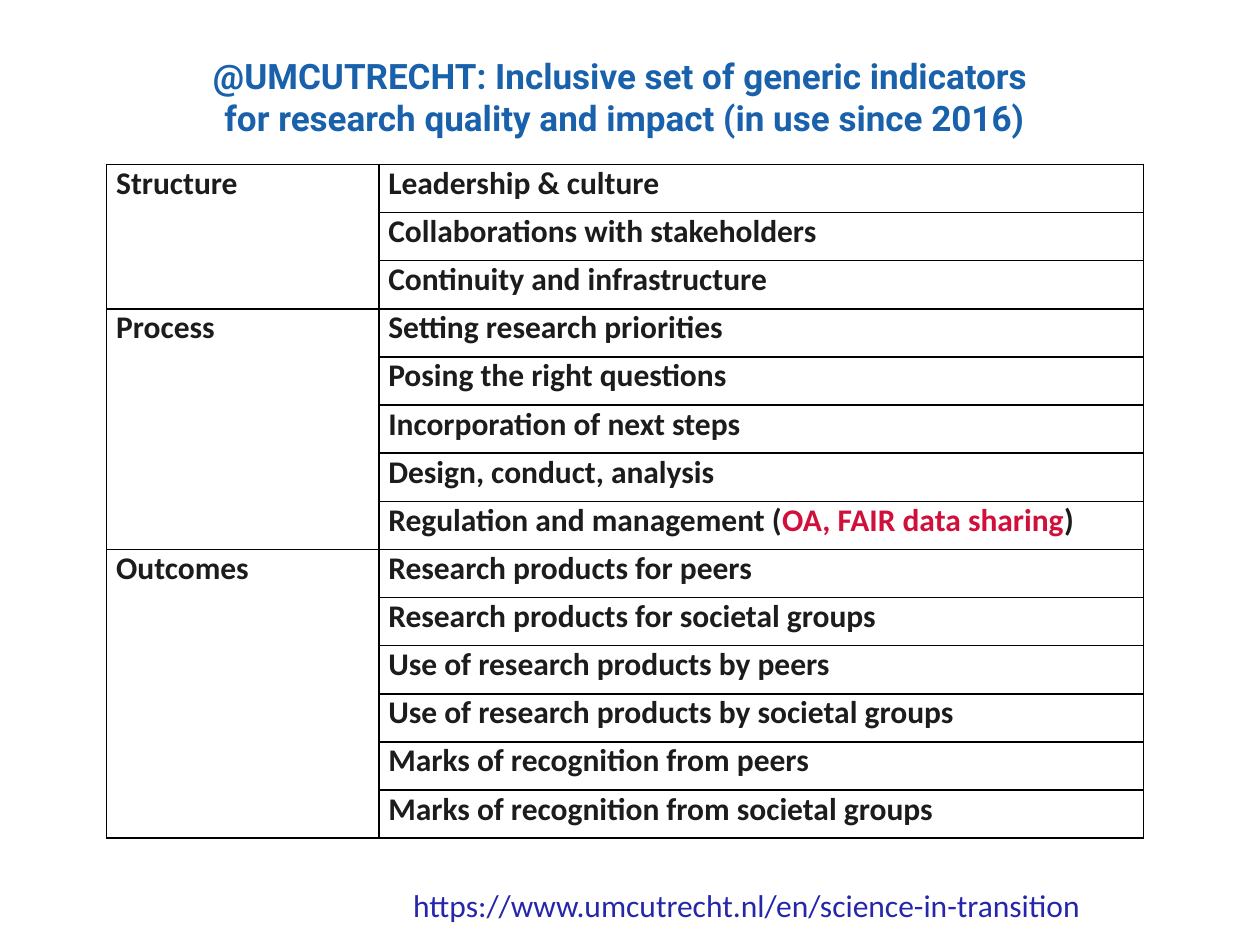
import dataclasses

import pptx
import pptx.dml.color
import pptx.enum.text
import pptx.oxml
import pptx.oxml.ns
import pptx.util

Pt = pptx.util.Pt
RGB = pptx.dml.color.RGBColor.from_string
Align = pptx.enum.text.PP_ALIGN
Anchor = pptx.enum.text.MSO_ANCHOR


@dataclasses.dataclass(frozen=True)
class Theme:
    head: str = "Roboto"
    body: str = "Calibri"
    big: int = 20
    size: int = 18
    blue: str = "1961AB"
    ink: str = "1C1C1C"
    red: str = "D0103A"
    link: str = "2526A9"
    rule: str = "000000"


THEME = Theme()

# Each group: name and indicators; an indicator is a list of (text, colour)
GROUPS = [
    ("Structure", [
        "Leadership & culture",
        "Collaborations with stakeholders",
        "Continuity and infrastructure",
    ]),
    ("Process", [
        "Setting research priorities",
        "Posing the right questions",
        "Incorporation of next steps",
        "Design, conduct, analysis",
        [("Regulation and management (", THEME.ink),
         ("OA, FAIR data sharing", THEME.red),
         (")", THEME.ink)],
    ]),
    ("Outcomes", [
        "Research products for peers",
        "Research products for societal groups",
        "Use of research products by peers",
        "Use of research products by societal groups",
        "Marks of recognition from peers",
        "Marks of recognition from societal groups",
    ]),
]


def style(para, face, size, color, bold=False):
    font = para.font
    font.name, font.size, font.bold = face, Pt(size), bold
    font.color.rgb = RGB(color)


def border(cell):
    """Draw a thin rule on all four sides of a cell."""
    props = cell._tc.get_or_add_tcPr()
    for i, side in enumerate("LRTB"):
        props.insert(i, pptx.oxml.parse_xml(
            f'<a:ln{side} {pptx.oxml.ns.nsdecls("a")} w="{Pt(1)}">'
            f'<a:solidFill><a:srgbClr val="{THEME.rule}"/></a:solidFill>'
            f'</a:ln{side}>'))


def fill(cell, parts):
    """Write plain text, or coloured parts, into a cell."""
    para = cell.text_frame.paragraphs[0]
    if isinstance(parts, str):
        parts = [(parts, THEME.ink)]
    for text, color in parts:
        run = para.add_run()
        run.text = text
        if color != THEME.ink:
            run.font.color.rgb = RGB(color)
    style(para, THEME.body, THEME.size, THEME.ink, True)


def title(slide, x, y, w, h):
    shape = slide.shapes.title
    shape.left, shape.top, shape.width, shape.height = map(Pt, (x, y, w, h))
    frame = shape.text_frame
    frame.word_wrap = True
    frame.vertical_anchor = Anchor.TOP
    frame.margin_top = Pt(6)
    frame.text = ("@UMCUTRECHT: Inclusive set of generic indicators \v"
                  "for research quality and impact (in use since 2016)")
    para = frame.paragraphs[0]
    para.alignment = Align.CENTER
    style(para, THEME.head, THEME.big, THEME.blue, True)


def grid(slide, x, y, w, h):
    count = sum(len(items) for _, items in GROUPS)
    table = slide.shapes.add_table(count, 2, *map(Pt, (x, y, w, h))).table
    table.first_row = table.horz_banding = False
    first = 155.5
    table.columns[0].width = Pt(first)
    table.columns[1].width = Pt(w - first)
    for row in table.rows:
        row.height = Pt(h / count)
    for cell in table.iter_cells():
        cell.margin_left = cell.margin_right = Pt(5.4)
        cell.margin_top = cell.margin_bottom = 0
        cell.vertical_anchor = Anchor.TOP
        cell.fill.background()
        border(cell)
    # One merged name cell beside the indicators of each group
    top = 0
    for name, items in GROUPS:
        end = top + len(items)
        table.cell(top, 0).merge(table.cell(end - 1, 0))
        fill(table.cell(top, 0), name)
        for i, item in enumerate(items, top):
            fill(table.cell(i, 1), item)
        top = end


def source(slide, x, y, w, h):
    frame = slide.shapes.add_textbox(*map(Pt, (x, y, w, h))).text_frame
    frame.word_wrap = False
    frame.auto_size = pptx.enum.text.MSO_AUTO_SIZE.SHAPE_TO_FIT_TEXT
    frame.text = "https://www.umcutrecht.nl/en/science-in-transition"
    style(frame.paragraphs[0], THEME.body, THEME.size, THEME.link)


def main():
    deck = pptx.Presentation()
    deck.slide_width, deck.slide_height = Pt(720), Pt(540)
    slide = deck.slides.add_slide(deck.slide_layouts[5])
    title(slide, 60, 25, 594, 64)
    grid(slide, 61, 94, 592.5, 385)
    source(slide, 229, 502.5, 400, 29)
    deck.save("out.pptx")


if __name__ == "__main__":
    main()
